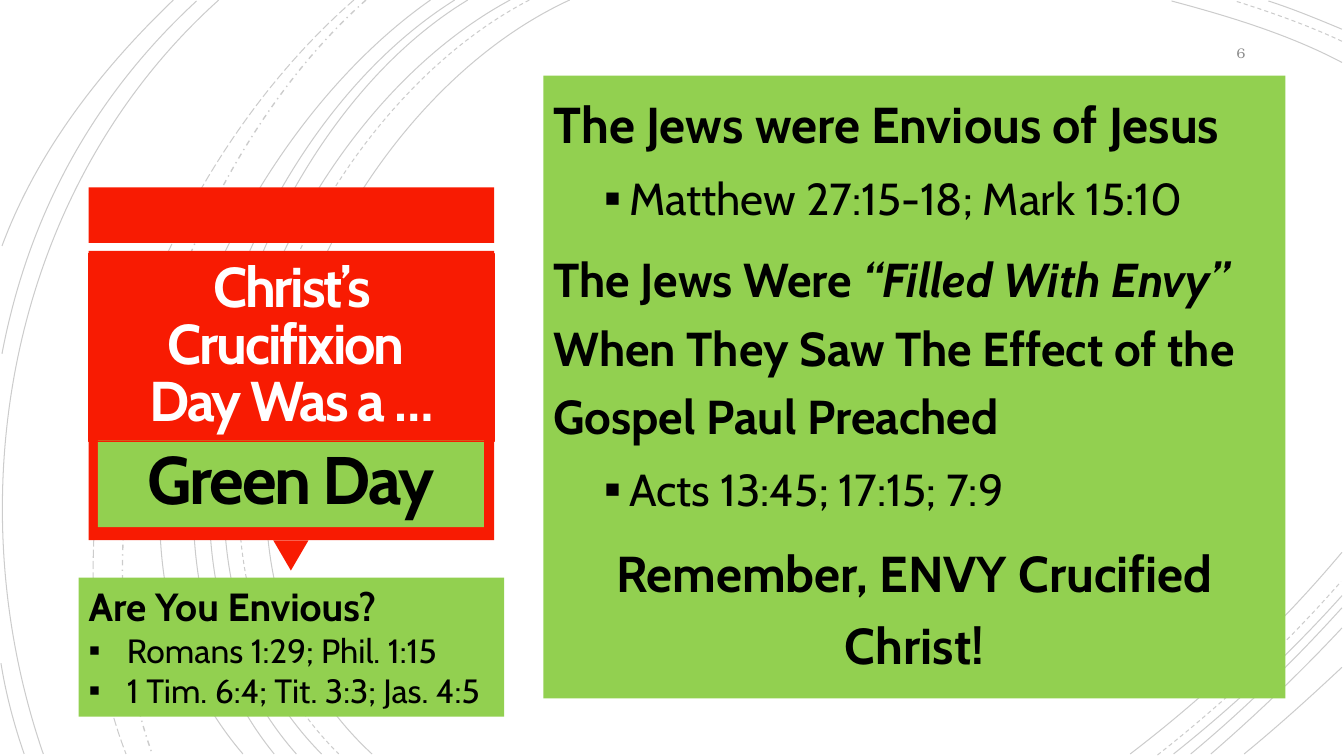
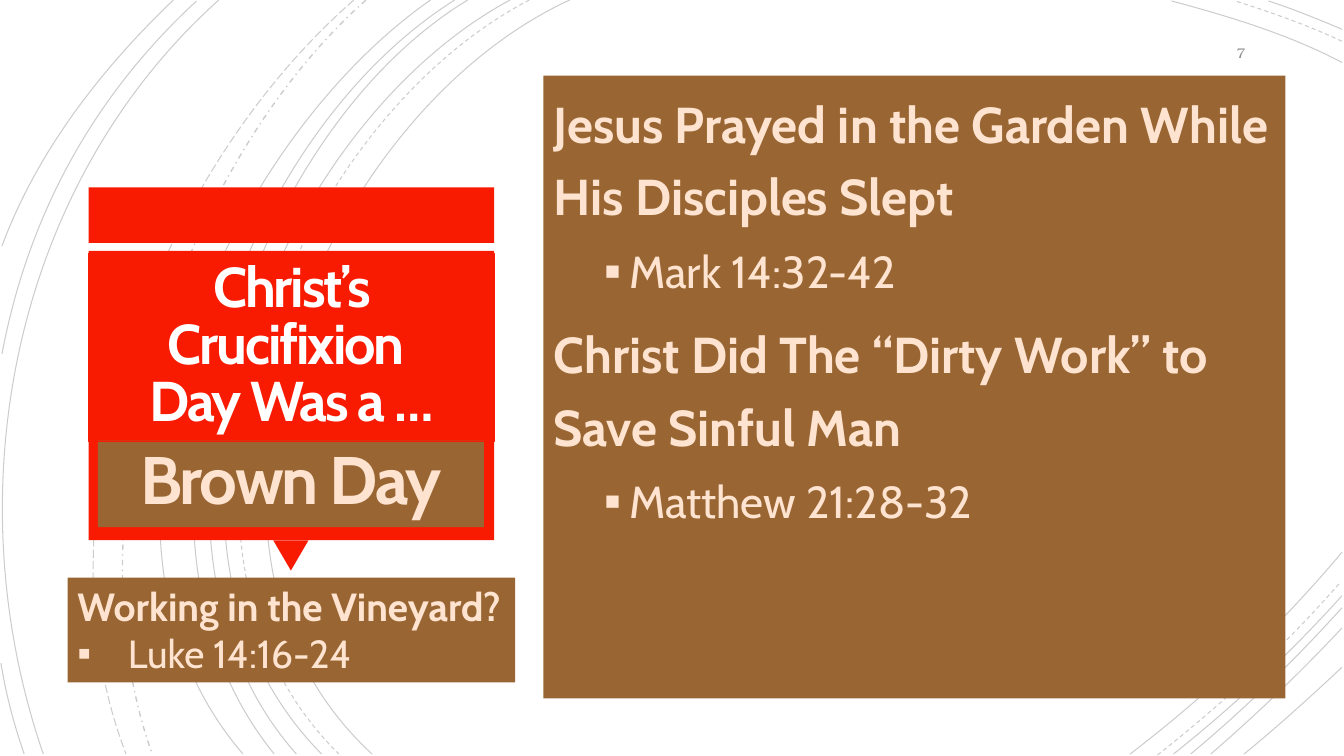
from lxml.etree import SubElement
from pptx import Presentation
from pptx.dml.color import RGBColor
from pptx.enum.dml import MSO_LINE_DASH_STYLE as Dash
from pptx.enum.shapes import MSO_SHAPE as Kind
from pptx.enum.text import MSO_ANCHOR as Anchor, MSO_AUTO_SIZE as Fit, PP_ALIGN as Align
from pptx.oxml.ns import qn
from pptx.util import Inches, Pt

COLORS = {
    "red": "F81B02", "green": "92D050", "brown": "996633", "cream": "FEE4D0",
    "black": "000000", "white": "FFFFFF", "grey": "8C8C8C",
}
FONT, SERIF = "Cabin", "TeX Gyre Bonum"
BANNER = (0.88, 1.86, 4.02, 3.8)
PANEL = (5.39, 0.75, 7.36, 6.18)
NOTE_TOP = 5.73
NUMBER = (11.45, 0.35, 1, 0.35)

# Each arc: start, two control points, end
SOLID = [
    [(5.65, 0), (3.15, 1.15), (1.43, 5.4), (3.69, 7.48)],
    [(13.31, 0.62), (12.78, 0.34), (12.18, 0.16), (11.62, 0.01)],
    [(11.21, 7.48), (11.97, 6.9), (12.69, 6.22), (13.31, 5.48)],
    [(5.06, 0), (2.7, 1.27), (1.1, 5.37), (3.19, 7.48)],
    [(13.31, 0.29), (13.07, 0.19), (12.83, 0.09), (12.58, 0.01)],
    [(11.64, 7.48), (12.23, 7.01), (12.8, 6.48), (13.31, 5.91)],
    [(4.64, 0), (2.44, 1.33), (1.1, 5.41), (2.94, 7.48)],
    [(11.81, 7.48), (12.34, 7.04), (12.84, 6.55), (13.31, 6.03)],
    [(4.51, 0), (2.31, 1.38), (0.97, 5.33), (2.72, 7.48)],
    [(12.01, 7.48), (12.46, 7.09), (12.9, 6.67), (13.31, 6.23)],
    [(4.27, 0), (2.17, 1.47), (0.53, 5.29), (2.41, 7.48)],
    [(12.34, 7.48), (12.67, 7.21), (12.99, 6.92), (13.31, 6.62)],
    [(2.17, 0), (0.11, 1.85), (-0.46, 4.9), (0.43, 7.48)],
    [(1.95, 0.01), (0.92, 0.96), (0.28, 2.14), (0.02, 3.51)],
    [(0.01, 6.58), (0.06, 6.89), (0.14, 7.19), (0.24, 7.48)],
    [(1.72, 0), (1, 0.69), (0.37, 1.5), (0.02, 2.44)],
]
DASHED = [
    [(5.25, 0), (2.85, 1.25), (1.23, 5.37), (3.36, 7.48)],
    [(13.31, 0.41), (12.97, 0.25), (12.6, 0.12), (12.25, 0.01)],
    [(11.48, 7.49), (12.13, 6.98), (12.75, 6.4), (13.3, 5.77)],
]
DOTTED = [[(3.63, 0), (1.76, 1.66), (0.65, 5.09), (1.51, 7.48)]]
LONG = [[(3.51, 0), (1.57, 1.69), (0.29, 4.99), (1.25, 7.48)]]
ARCS = [
    (SOLID, Dash.SOLID, 0.75), (DASHED, Dash.DASH, 0.75),
    (DOTTED, Dash.DASH_DOT, 1), (LONG, Dash.LONG_DASH, 0.75),
]


def color(name):
    return RGBColor.from_string(COLORS[name])


def paint(shape, name):
    shape.fill.solid()
    shape.fill.fore_color.rgb = color(name)


def place(shape, box):
    shape.left, shape.top, shape.width, shape.height = map(Inches, box)


def block(slide, box, fill=None, kind=Kind.RECTANGLE):
    shape = slide.shapes.add_shape(kind, *map(Inches, box))
    shape.shadow.inherit = False
    shape.line.fill.background()
    if fill:
        paint(shape, fill)
    else:
        shape.fill.background()
    return shape


def style(para, size, ink, bold=True, font=FONT, align=Align.LEFT):
    para.alignment = align
    face = para.font
    face.name, face.size, face.bold = font, Pt(size), bold
    face.color.rgb = color(ink)


def bullet(para, left, hang, scale=None):
    """Indent the paragraph and give it a square bullet, or none if hang is 0."""
    props = para._p.get_or_add_pPr()
    props.set("marL", str(Inches(left)))
    props.set("indent", str(-Inches(hang)))
    marks = []
    if hang and scale:
        marks.append(("a:buSzPct", {"val": str(scale * 1000)}))
    if hang:
        marks.append(("a:buFont", {"typeface": "Arial"}))
        marks.append(("a:buChar", {"char": "▪"}))
    else:
        marks.append(("a:buNone", {}))
    face = props.find(qn("a:defRPr"))
    for tag, attrs in marks:
        node = SubElement(props, qn(tag), attrs)
        if face is not None:
            face.addprevious(node)


def heading(frame, lines, size, ink):
    """Centred, tightly spaced lines with wide insets."""
    frame.word_wrap, frame.auto_size = True, Fit.NONE
    frame.vertical_anchor = Anchor.MIDDLE
    frame.margin_left = frame.margin_right = Inches(0.25)
    frame.margin_top = frame.margin_bottom = Inches(0.25)
    frame.text = "\n".join(lines)
    for para in frame.paragraphs:
        style(para, size, ink, align=Align.CENTER)
        para.line_spacing, para.space_before = 0.85, Pt(0)
        para.font._element.set("spc", "-150")


def arc(slide, points, dash, width):
    start, *rest = [(Inches(x), Inches(y)) for x, y in points]
    pen = slide.shapes.build_freeform(*start)
    pen.add_line_segments(rest, close=False)
    shape = pen.convert_to_shape()
    shape.shadow.inherit = False
    shape.fill.background()
    line = shape.line
    line.color.rgb = color("black")
    line.width, line.dash_style = Pt(width), dash
    tint = shape.element.spPr.find(".//" + qn("a:ln")).find(".//" + qn("a:srgbClr"))
    SubElement(tint, qn("a:alpha"), val="20000")
    path = shape.element.spPr.find(".//" + qn("a:path"))
    steps = path.findall(qn("a:lnTo"))
    curve = SubElement(path, qn("a:cubicBezTo"))
    for step in steps:
        curve.append(step[0])
        path.remove(step)
    return shape


def banner(slide, box):
    """Red strip and block with a pointer below."""
    x, y, w, h = box
    tip = block(slide, (x + 1.83, y + h - 0.3, 0.35, 0.3), "red", Kind.ISOSCELES_TRIANGLE)
    tip.rotation = 180
    return [
        block(slide, (x, y, w, 0.55), "red"), tip,
        block(slide, (x, y + 0.63, w, h - 0.93), "red"),
    ]


def backdrop(slide):
    """Draw the shared decoration and hand it to the slide's layout."""
    parts = [arc(slide, pts, dash, width) for group, dash, width in ARCS for pts in group]
    parts += banner(slide, BANNER)
    tree = slide.slide_layout.shapes.element
    for part in parts:
        tree.append(part.element)
    for num, node in enumerate(tree.iter(qn("p:cNvPr")), 1):
        node.set("id", str(num))


def title(slide, text, fill, ink):
    x, y, w, h = BANNER
    shape = slide.shapes.title
    place(shape, (x + 0.09, y + 2.51, w - 0.19, 0.86))
    paint(shape, fill)
    heading(shape.text_frame, [text], 48, ink)


def panel(slide, box, items, fill, ink):
    """Fill the body; text between asterisks is italic."""
    shape = slide.placeholders[1]
    place(shape, box)
    paint(shape, fill)
    frame = shape.text_frame
    frame.word_wrap, frame.auto_size = True, Fit.NONE
    for num, (kind, size, text) in enumerate(items):
        para = frame.paragraphs[0] if num == 0 else frame.add_paragraph()
        sub = kind == "verse"
        align = Align.CENTER if kind == "close" else Align.LEFT
        style(para, size, ink, bold=not sub, align=align)
        para.level = int(sub)
        para.line_spacing, para.space_before = 1.2, Pt(5 if sub else 10)
        bullet(para, *((0.75, 0.25, 110) if sub else (0, 0)))
        for part, words in enumerate(text.split("*")):
            run = para.add_run()
            run.text = words
            if part % 2:
                run.font.italic = True


def note(slide, box, lines, size, hang, fill, ink):
    shape = block(slide, box, fill)
    frame = shape.text_frame
    frame.word_wrap, frame.auto_size = True, Fit.SHAPE_TO_FIT_TEXT
    frame.vertical_anchor = Anchor.TOP
    frame.text = "\n".join(lines)
    first, *rest = frame.paragraphs
    style(first, 28, ink)
    for para in rest:
        style(para, size, ink, bold=False)
        bullet(para, hang, hang)


def number(slide, box, value):
    frame = slide.shapes.add_textbox(*map(Inches, box)).text_frame
    frame.word_wrap, frame.vertical_anchor = True, Anchor.MIDDLE
    frame.text = str(value)
    style(frame.paragraphs[0], 10, "grey", False, SERIF, Align.RIGHT)


def label(slide):
    x, y, w, h = BANNER
    shape = block(slide, (x, y + 0.66, w, 1.86))
    shape.line.color.rgb = color("red")
    shape.line.width = Pt(0.75)
    heading(shape.text_frame, ["Christ’s Crucifixion ", "Day Was a …"], 40, "white")


DAYS = [
    {
        "title": "Green Day", "fill": "green", "ink": "black", "num": 6,
        "items": [
            ("point", 36, "The Jews were Envious of Jesus"),
            ("verse", 32, "Matthew 27:15-18; Mark 15:10"),
            ("point", 34, "The Jews Were *“Filled With Envy” *When They Saw "
                          "The Effect of the Gospel Paul Preached"),
            ("verse", 32, "Acts 13:45; 17:15; 7:9"),
            ("close", 36, "Remember, ENVY Crucified Christ!"),
        ],
        "note": ["Are You Envious?", "Romans 1:29; Phil. 1:15",
                 "1 Tim. 6:4; Tit. 3:3; Jas. 4:5"],
        "size": 24, "hang": 0.38, "box": (0.78, NOTE_TOP, 4.22, 1.38),
    },
    {
        "title": "Brown Day", "fill": "brown", "ink": "cream", "num": 7,
        "items": [
            ("point", 36, "Jesus Prayed in the Garden While His Disciples Slept"),
            ("verse", 32, "Mark 14:32-42"),
            ("point", 36, "Christ Did The “Dirty Work” to Save Sinful Man"),
            ("verse", 32, "Matthew 21:28-32"),
        ],
        "note": ["Working in the Vineyard?", "Luke 14:16-24"],
        "size": 28, "hang": 0.5, "box": (0.67, NOTE_TOP, 4.44, 1.04),
    },
]


def build(slide, day):
    tones = day["fill"], day["ink"]
    title(slide, day["title"], *tones)
    panel(slide, PANEL, day["items"], *tones)
    note(slide, day["box"], day["note"], day["size"], day["hang"], *tones)
    number(slide, NUMBER, day["num"])
    label(slide)


def main():
    deck = Presentation()
    deck.slide_width, deck.slide_height = Inches(13.33), Inches(7.5)
    layout = deck.slide_layouts[1]
    slides = [deck.slides.add_slide(layout) for _ in DAYS]
    backdrop(slides[0])
    for slide, day in zip(slides, DAYS):
        build(slide, day)
    deck.save("out.pptx")


if __name__ == "__main__":
    main()
